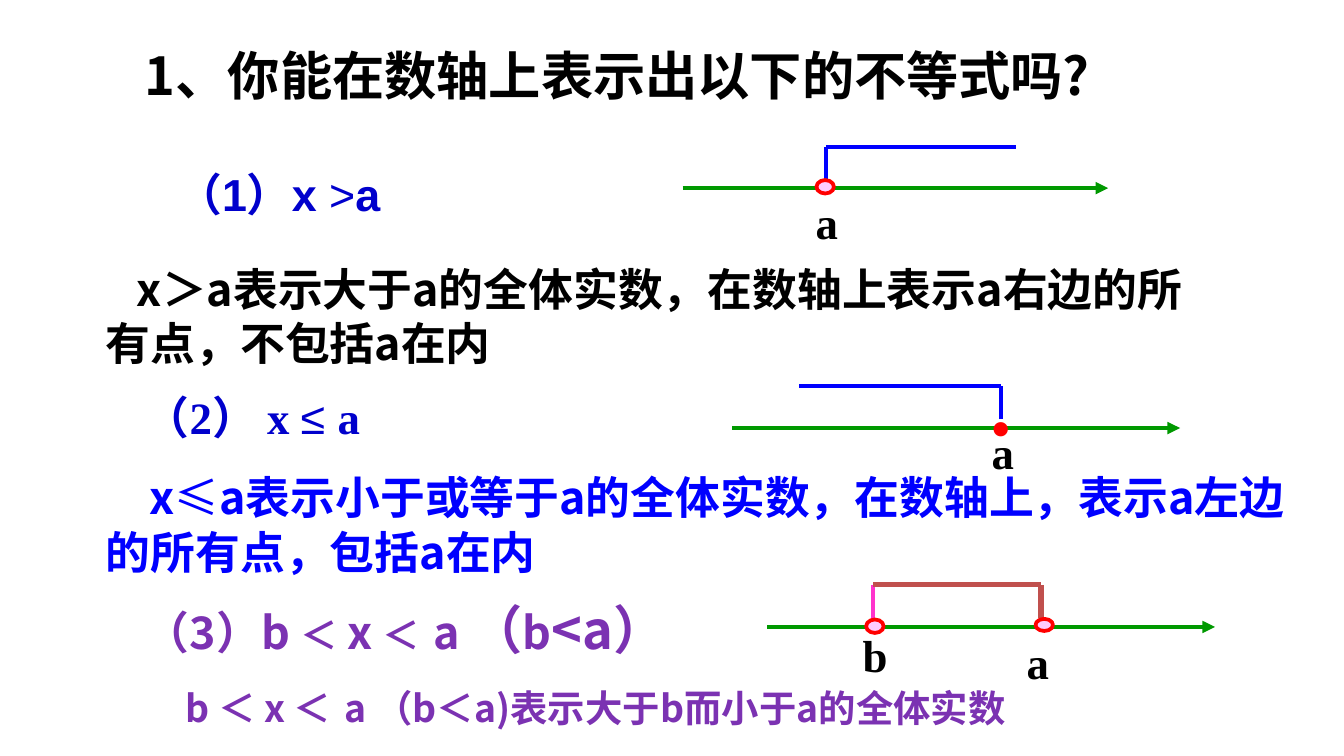
from dataclasses import dataclass
from typing import NamedTuple, Optional

from lxml.etree import SubElement
from pptx import Presentation
from pptx.dml.color import RGBColor
from pptx.enum.shapes import MSO_CONNECTOR as Connector, MSO_SHAPE as Preset
from pptx.enum.text import MSO_AUTO_SIZE as AutoSize
from pptx.oxml.ns import qn
from pptx.slide import Slide
from pptx.util import Emu, Pt

EMU_PER_PX = 4572


@dataclass(frozen=True)
class Theme:
    sans: str = "Noto Sans CJK SC"
    arial: str = "Arial"
    serif: str = "Times New Roman"
    black: str = "000000"
    blue: str = "0000FF"
    navy: str = "0000CC"
    purple: str = "7B32B2"
    dark_purple: str = "401A5D"
    green: str = "009900"
    red: str = "FF0000"
    blush: str = "FFCCFF"
    pink: str = "FF33CC"
    brick: str = "C0504D"
    note: int = 20
    body: int = 24
    title: int = 28
    large: int = 32
    line: float = 2.25
    thick: float = 3
    ring: float = 2


THEME = Theme()


class Run(NamedTuple):
    text: str
    size: int = THEME.body
    font: str = THEME.sans
    bold: bool = True


class TextBlock(NamedTuple):
    left: int
    top: int
    width: int
    height: int
    color: str
    runs: list[Run]
    indent: int = 0
    wrap: bool = True
    gradient_end: Optional[str] = None


class Segment(NamedTuple):
    start: tuple[int, int]
    end: tuple[int, int]
    color: str
    weight: float = THEME.line
    arrow: bool = False


class OpenPoint(NamedTuple):
    left: int
    top: int
    width: int = 26
    height: int = 20


def px(value: int) -> Emu:
    return Emu(value * EMU_PER_PX)


def rgb(color: str) -> RGBColor:
    return RGBColor.from_string(color)


def axis(left: int, right: int, y: int) -> Segment:
    return Segment((left, y), (right, y), THEME.green, arrow=True)


def point_label(text: str, left: int, top: int, width: int = 74,
                height: int = 100) -> TextBlock:
    run = Run(text, font=THEME.serif)
    return TextBlock(left, top, width, height, THEME.black, [run], wrap=False)


def draw_text(slide: Slide, block: TextBlock) -> None:
    shape = slide.shapes.add_textbox(
        px(block.left), px(block.top), px(block.width), px(block.height))
    frame = shape.text_frame
    frame.word_wrap = block.wrap
    frame.auto_size = AutoSize.SHAPE_TO_FIT_TEXT
    paragraph = frame.paragraphs[0]
    if block.indent:
        properties = paragraph._p.get_or_add_pPr()
        properties.set("marL", "0")
        properties.set("indent", str(px(block.indent)))
    for item in block.runs:
        run = paragraph.add_run()
        run.text = item.text
        font = run.font
        font.size, font.bold, font.name = Pt(item.size), item.bold, item.font
        east_asian = SubElement(run._r.get_or_add_rPr(), qn("a:ea"))
        east_asian.set("typeface", THEME.sans)
        if block.gradient_end:
            font.fill.gradient()
            font.fill.gradient_angle = 0
            first, last = font.fill.gradient_stops
            first.color.rgb = rgb(block.color)
            last.color.rgb = rgb(block.gradient_end)
        else:
            font.color.rgb = rgb(block.color)


def draw_segment(slide: Slide, segment: Segment) -> None:
    connector = slide.shapes.add_connector(
        Connector.STRAIGHT, *map(px, segment.start), *map(px, segment.end))
    connector.line.color.rgb = rgb(segment.color)
    connector.line.width = Pt(segment.weight)
    if segment.arrow:
        tail = SubElement(connector.line._get_or_add_ln(), qn("a:tailEnd"))
        tail.set("type", "triangle")
    SubElement(connector._element.spPr, qn("a:effectLst"))


def draw_open_point(slide: Slide, point: OpenPoint) -> None:
    shape = slide.shapes.add_shape(Preset.OVAL, *map(px, point))
    shape.shadow.inherit = False
    shape.fill.solid()
    shape.fill.fore_color.rgb = rgb(THEME.blush)
    shape.line.color.rgb = rgb(THEME.red)
    shape.line.width = Pt(THEME.ring)


STATEMENTS = [
    TextBlock(196, 54, 1678, 114, THEME.black, [
        Run("1、你能在数轴上表示出以下的不等式吗?", THEME.title)]),
    TextBlock(244, 238, 724, 102, THEME.navy, [
        Run("（1）x", font=THEME.arial),
        Run(" >", font=THEME.arial, bold=False),
        Run("a", font=THEME.arial)]),
    TextBlock(138, 380, 1660, 182, THEME.black, [
        Run("x＞a表示大于a的全体实数，在数轴上表示a右边的所有点，不包括a在内")],
        indent=46),
    TextBlock(180, 570, 934, 102, THEME.navy, [
        Run("（2） x ", font=THEME.serif),
        Run("≤ ", font=THEME.arial, bold=False),
        Run("a", font=THEME.serif)], indent=16),
    TextBlock(138, 678, 1796, 194, THEME.blue, [
        Run(" ", THEME.title),
        Run("x"),
        Run("≤", bold=False),
        Run("a表示小于或等于a的全体实数，在数轴上，表示a左边的所有点，包括a在内")],
        indent=47),
    TextBlock(196, 868, 1416, 128, THEME.purple, [
        Run("（3）b "),
        Run("＜", THEME.note),
        Run(" x "),
        Run("＜", THEME.note),
        Run(" ", THEME.large),
        Run("a "),
        Run("（", THEME.title),
        Run("b"),
        Run("<a）", THEME.title)], gradient_end=THEME.dark_purple),
    TextBlock(244, 976, 1800, 128, THEME.purple, [
        Run("b ＜ x ＜", THEME.note),
        Run(" ", THEME.large),
        Run("a （b＜a)表示大于b而小于a的全体实数", THEME.note)],
        indent=13, gradient_end=THEME.dark_purple),
]

SEGMENTS = [
    axis(1016, 1649, 280),
    Segment((1229, 268), (1229, 219), THEME.blue),
    Segment((1229, 219), (1512, 219), THEME.blue),
    axis(1090, 1756, 637),
    Segment((1490, 624), (1490, 575), THEME.blue),
    Segment((1490, 575), (1189, 575), THEME.blue),
    axis(1142, 1808, 933),
    Segment((1299, 932), (1299, 870), THEME.pink),
    Segment((1299, 870), (1549, 870), THEME.pink),
    Segment((1549, 920), (1549, 870), THEME.brick, THEME.thick),
    Segment((1549, 870), (1299, 870), THEME.brick, THEME.thick),
]

POINT_LABELS = [
    point_label("a", 1194, 280),
    point_label("a", 1456, 622),
    point_label("a", 1508, 935, height=182),
    point_label("b", 1264, 924, width=78),
    TextBlock(1454, 570, 72, 116, THEME.red,
              [Run("•", THEME.large, THEME.serif, False)], wrap=False),
]

OPEN_POINTS = [OpenPoint(1215, 268), OpenPoint(1541, 921, height=18),
               OpenPoint(1289, 922)]


def main() -> None:
    presentation = Presentation()
    presentation.slide_width = px(2000)
    presentation.slide_height = px(1125)
    slide = presentation.slides.add_slide(presentation.slide_layouts[6])
    for statement in STATEMENTS:
        draw_text(slide, statement)
    for segment in SEGMENTS:
        draw_segment(slide, segment)
    for label in POINT_LABELS:
        draw_text(slide, label)
    for point in OPEN_POINTS:
        draw_open_point(slide, point)
    presentation.save("out.pptx")


if __name__ == "__main__":
    main()
